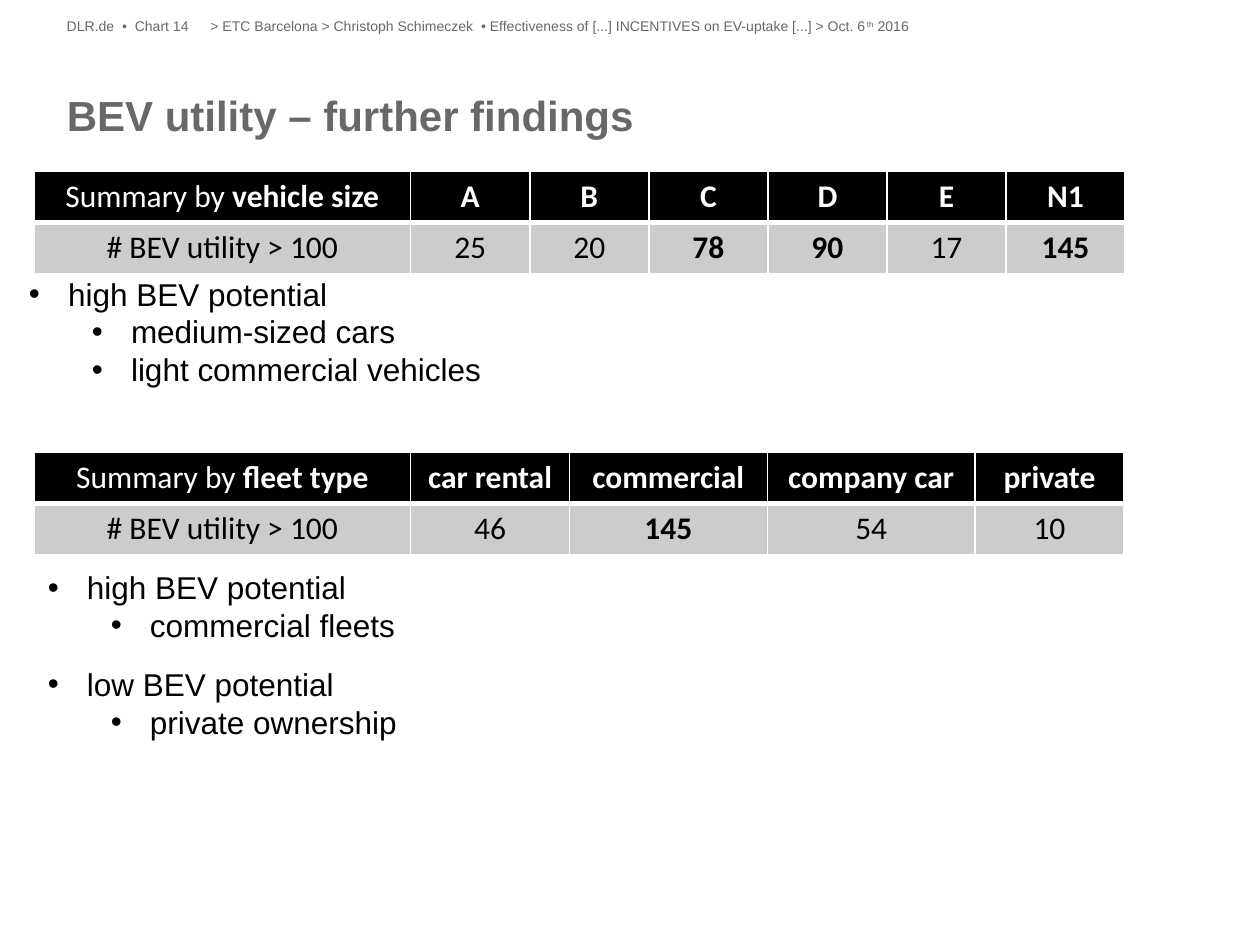
from pptx import Presentation
from pptx.dml.color import RGBColor
from pptx.enum.text import MSO_ANCHOR, MSO_AUTO_SIZE, PP_ALIGN
from pptx.oxml.ns import qn
from pptx.util import Inches, Pt
from lxml.etree import SubElement

BLACK = RGBColor(0, 0, 0)
WHITE = RGBColor(255, 255, 255)
GRAY = RGBColor(0x68, 0x68, 0x68)
LIGHT = RGBColor(0xCC, 0xCC, 0xCC)

TITLE_FONT = {"name": "Arial", "size": Pt(24), "bold": True}
HEADER_FONT = {"name": "Arial", "size": Pt(8)}
LIST_FONT = {"name": "Arial", "size": Pt(18)}
CELL_FONT = {"name": "Calibri", "size": Pt(18)}

TITLE = "BEV utility – further findings"
HEADERS = [
    ((0.53, 0.14, 1.14, 0.16), [("DLR.de  •  Chart 14", False)]),
    ((1.67, 0.14, 7.8, 0.16), [
        ("> ETC Barcelona > Christoph Schimeczek  • Effectiveness of [...] "
         "INCENTIVES on EV-uptake [...] > Oct. 6", False),
        ("th", True),
        (" 2016", False),
    ]),
]
ROW_LABEL = "# BEV utility > 100"
TABLES = [
    {"top": 1.36, "topic": "vehicle size", "widths": [0.945] * 6,
     "names": ["A", "B", "C", "D", "E", "N1"],
     "values": [25, 20, 78, 90, 17, 145], "strong": {78, 90, 145}},
    {"top": 3.59, "topic": "fleet type", "widths": [1.26, 1.57, 1.65, 1.18],
     "names": ["car rental", "commercial", "company car", "private"],
     "values": [46, 145, 54, 10], "strong": {145}},
]
TABLE_LEFT, LABEL_WIDTH, ROW_HEIGHT = 0.27, 2.99, 0.405
LISTS = [
    ((0.23, 2.18, 9.45, 0.91), (0, 0), [
        ("high BEV potential", ["medium-sized cars", "light commercial vehicles"]),
    ]),
    ((0.28, 4.46, 4.09, 1.48), (0.1, 0.05), [
        ("high BEV potential", ["commercial fleets"]),
        ("low BEV potential", ["private ownership"]),
    ]),
]


def place(sp, box):
    sp.left, sp.top, sp.width, sp.height = map(Inches, box)


def set_frame(tf, margins=(0, 0)):
    x, y = map(Inches, margins)
    values = {"margin_left": x, "margin_right": x, "margin_top": y,
              "margin_bottom": y, "word_wrap": True,
              "vertical_anchor": MSO_ANCHOR.TOP, "auto_size": MSO_AUTO_SIZE.NONE}
    for key, value in values.items():
        setattr(tf, key, value)


def add_run(p, text, style, color):
    r = p.add_run()
    r.text = text
    for key, value in style.items():
        setattr(r.font, key, value)
    r.font.color.rgb = color
    return r


def add_bullet(p, text, level, space):
    p.level = level
    p.alignment = PP_ALIGN.LEFT
    p.line_spacing = 1.0
    p.space_before, p.space_after = Pt(space), Pt(0)
    pPr = p._p.get_or_add_pPr()
    pPr.set("marL", str(Inches(0.31 + 0.5 * level)))
    pPr.set("indent", str(Inches(-0.31)))
    SubElement(pPr, qn("a:buFont"), typeface="Arial")
    SubElement(pPr, qn("a:buChar"), char="•")
    add_run(p, text, LIST_FONT, BLACK)


def fill_list(sp, box, margins, groups):
    place(sp, box)
    tf = sp.text_frame
    set_frame(tf, margins)
    for i, (head, subs) in enumerate(groups):
        p = tf.add_paragraph() if i else tf.paragraphs[0]
        add_bullet(p, head, 0, 12 if i else 0)
        for sub in subs:
            add_bullet(tf.add_paragraph(), sub, 1, 0)


def format_cell(cell, runs, fill, color, borders):
    p = cell.text_frame.paragraphs[0]
    p.alignment = PP_ALIGN.CENTER
    for text, bold in runs:
        add_run(p, text, {**CELL_FONT, "bold": bold}, color)
    tcPr = cell._tc.get_or_add_tcPr()
    for side, width in borders.items():
        ln = SubElement(tcPr, qn(f"a:ln{side}"), w=str(Pt(width)))
        SubElement(SubElement(ln, qn("a:solidFill")), qn("a:srgbClr"), val=str(WHITE))
    cell.fill.solid()
    cell.fill.fore_color.rgb = fill


def add_summary(s, data):
    widths = [LABEL_WIDTH] + data["widths"]
    box = (TABLE_LEFT, data["top"], sum(widths), 2 * ROW_HEIGHT)
    table = s.shapes.add_table(2, len(widths), *map(Inches, box)).table
    for column, width in zip(table.columns, widths):
        column.width = Inches(width)
    head = [[("Summary by ", False), (data["topic"], True)]]
    head += [[(name, True)] for name in data["names"]]
    body = [[(ROW_LABEL, False)]]
    body += [[(str(v), v in data["strong"])] for v in data["values"]]
    rows = [(head, BLACK, WHITE, {"L": 1, "R": 1, "T": 1, "B": 3}),
            (body, LIGHT, BLACK, {"L": 1, "R": 1, "T": 3, "B": 1})]
    for row, (cells, fill, color, borders) in zip(table.rows, rows):
        for cell, runs in zip(row.cells, cells):
            format_cell(cell, runs, fill, color, borders)


def main():
    prs = Presentation()
    prs.slide_width, prs.slide_height = Inches(10), Inches(7.5)
    s = prs.slides.add_slide(prs.slide_layouts.get_by_name("Two Content"))
    title, *bodies = s.placeholders

    place(title, (0.53, 0.71, 8.94, 0.81))
    set_frame(title.text_frame)
    p = title.text_frame.paragraphs[0]
    p.alignment = PP_ALIGN.LEFT
    add_run(p, TITLE, TITLE_FONT, GRAY)

    for box, runs in HEADERS:
        tf = s.shapes.add_textbox(*map(Inches, box)).text_frame
        set_frame(tf)
        for text, raised in runs:
            r = add_run(tf.paragraphs[0], text, HEADER_FONT, GRAY)
            if raised:
                r._r.get_or_add_rPr().set("baseline", "30000")

    for data in TABLES:
        add_summary(s, data)
    for sp, (box, margins, groups) in zip(bodies, LISTS):
        fill_list(sp, box, margins, groups)

    prs.save("out.pptx")


if __name__ == "__main__":
    main()
